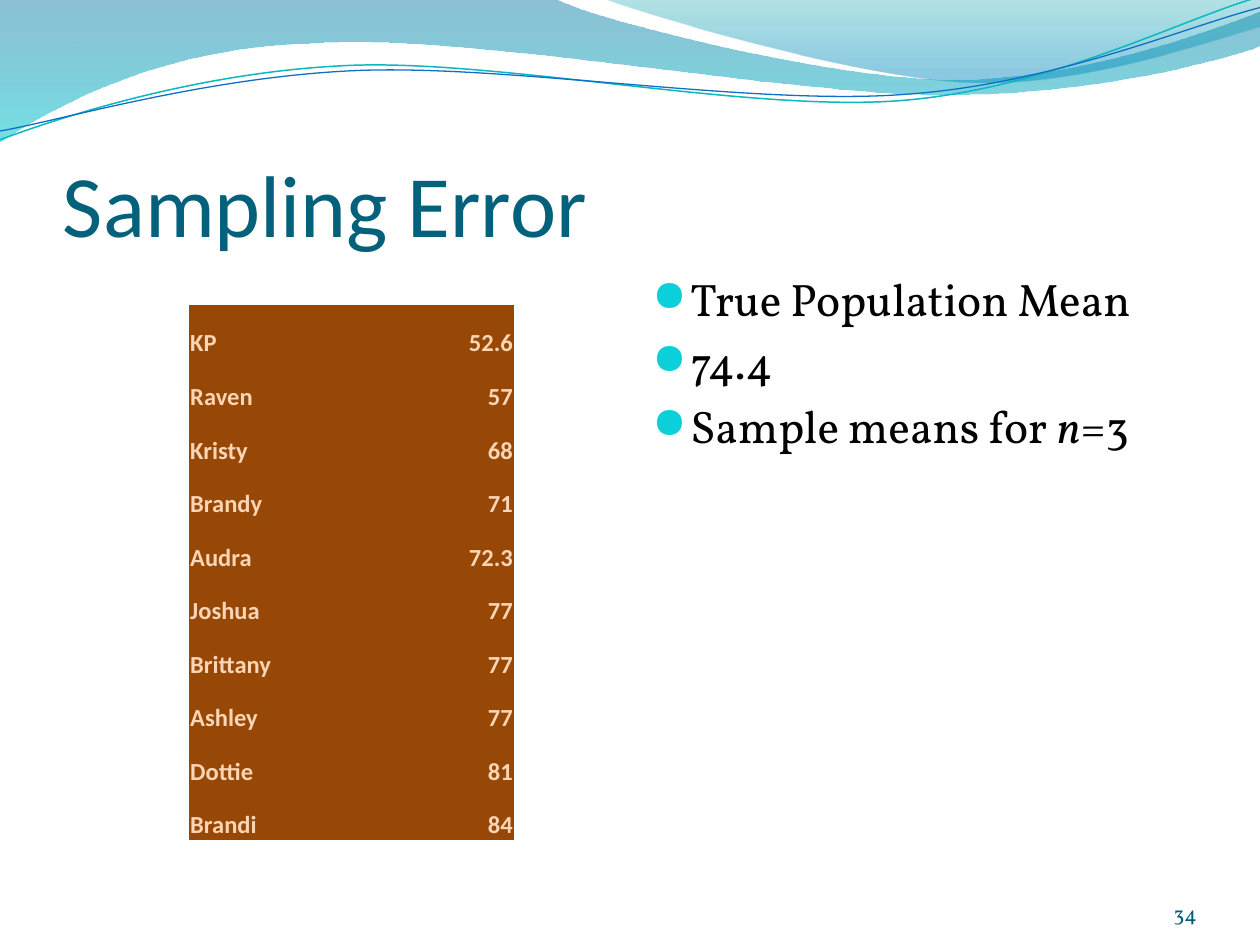
from math import cos, radians, sin

from lxml import etree
from pptx import Presentation
from pptx.dml.color import RGBColor
from pptx.enum.text import MSO_ANCHOR, PP_ALIGN
from pptx.oxml.ns import qn
from pptx.util import Inches, Pt

BOTTOM, TOP = MSO_ANCHOR.BOTTOM, MSO_ANCHOR.TOP
LEFT, RIGHT = PP_ALIGN.LEFT, PP_ALIGN.RIGHT
COLORS = {
    "title": "04617B", "body": "000000", "bullet": "0BD0D9", "number": "045D75",
    "cell": "974807", "cell_text": "FCD5B4",
    "teal_line": "0AB8BF", "blue_line": "0F6FC6",
    "wave_top": "0074A1", "wave_bottom": "00C6CF",
    "crest_top": "00A1A9", "crest_bottom": "008BBF",
}
TILT = -2.7

presentation = Presentation()
presentation.slide_width, presentation.slide_height = Inches(10), Inches(7.5)
slide = presentation.slides.add_slide(presentation.slide_layouts[6])


def add_outline(box, start, segments, closed, rotation=0):
    """Draw a path in a box; a segment of 1 point is a line, one of 3 a Bezier curve."""
    left, top, width, height = box
    builder = slide.shapes.build_freeform(Inches(start[0]), Inches(start[1]))
    builder.add_line_segments([tuple(map(Inches, segment[-1])) for segment in segments], closed)
    shape = builder.convert_to_shape()
    shape.shadow.inherit = False
    shape.left, shape.top, shape.width, shape.height = map(Inches, box)
    shape.rotation = rotation
    outline = next(shape._element.spPr.iter(qn("a:path")))
    outline.set("w", str(Inches(width)))
    outline.set("h", str(Inches(height)))
    center_x, center_y = left + width / 2, top + height / 2
    cosine, sine = cos(radians(rotation)), sin(radians(rotation))
    # Points are slide positions, so undo the rotation inside the box
    for command, segment in zip(list(outline), [[start], *segments]):
        if len(segment) == 3:
            curve = etree.Element(qn("a:cubicBezTo"))
            outline.replace(command, curve)
            command = curve
        for point in list(command):
            command.remove(point)
        for x, y in segment:
            dx, dy = x - center_x, y - center_y
            local_x = dx * cosine + dy * sine + width / 2
            local_y = dy * cosine - dx * sine + height / 2
            etree.SubElement(command, qn("a:pt"), x=str(Inches(local_x)), y=str(Inches(local_y)))
    return shape


def add_text(frame, paragraphs, size, font, color, align=LEFT, **style):
    """Fill a text frame with paragraphs, each a list of (text, italic) runs."""
    for index, runs in enumerate(paragraphs):
        paragraph = frame.paragraphs[0] if index == 0 else frame.add_paragraph()
        paragraph.alignment = align
        for text, italic in runs:
            run = paragraph.add_run()
            run.text = text
            run.font.color.rgb = RGBColor.from_string(COLORS[color])
            for name, value in {"size": Pt(size), "name": font, "italic": italic, **style}.items():
                setattr(run.font, name, value)


# Translucent waves: box, start, segments, stops (position, colour, opacity in %)
waves = [
    ((-0.01, -0.01, 10.02, 1.14), (0, 0),
     [[(4.4, -0.01)], [(4.76, 0.17), (6.64, 0.63), (7.58, 0.63)],
      [(8.53, 0.63), (9.58, 0.26), (10, 0.09)], [(10.01, 0.36)],
      [(9.83, 0.44), (8.7, 0.76), (7.46, 0.75)], [(6.22, 0.75), (3.82, 0.28), (2.57, 0.34)],
      [(1.29, 0.36), (0.46, 0.83), (-0.01, 1.13)], [(0, 0)]],
     [(0, "wave_top", 45), (1, "wave_bottom", 55)]),
    ((4.79, -0.01, 5.21, 0.7), (4.79, -0.01),
     [[(5.09, 0.11), (6.82, 0.62), (7.69, 0.65)], [(8.56, 0.69), (9.61, 0.32), (10, 0.21)],
      [(10, 0)], [(4.79, -0.01)]],
     [(0, "crest_top", 30), (0.8, "crest_bottom", 45)]),
]
for box, start, segments, stops in waves:
    wave = add_outline(box, start, segments, True)
    wave.line.fill.background()
    wave.fill.gradient()
    wave.fill.gradient_angle = 270
    for stop, (position, color, _) in zip(wave.fill.gradient_stops, stops):
        stop.position = position
        stop.color.rgb = RGBColor.from_string(COLORS[color])
    for element, (_, _, opacity) in zip(wave._element.spPr.iter(qn("a:srgbClr")), stops):
        etree.SubElement(element, qn("a:alpha"), val=str(opacity * 1000))

# Thin tilted wave lines
wave_lines = [
    ((-0.02, 0.22, 10.02, 0.71), (0, 1.11),
     [[(0.48, 0.93), (1.58, 0.57), (2.77, 0.52)], [(3.95, 0.47), (5.93, 0.89), (7.13, 0.8)],
      [(8.33, 0.71), (9.38, 0.15), (9.98, -0.02)]], "teal_line", 0.85),
    ((-0.02, 0.3, 10.03, 0.58), (0, 1.04),
     [[(0.47, 0.96), (1.64, 0.61), (2.83, 0.56)], [(4.03, 0.51), (5.97, 0.84), (7.17, 0.75)],
      [(8.36, 0.67), (9.41, 0.21), (10, 0.06)]], "blue_line", 0.75),
]
for box, start, segments, color, width in wave_lines:
    wave_line = add_outline(box, start, segments, False, TILT)
    wave_line.fill.background()
    wave_line.line.color.rgb = RGBColor.from_string(COLORS[color])
    wave_line.line.width = Pt(width)

# Title, bullet list and slide number: box, insets, anchor, paragraphs, text style
bullets = [[("True Population Mean", False)], [("74.4", False)],
           [("Sample means for ", False), ("n", True), ("=3", False)]]
text_boxes = [
    ((0.5, 0.77, 9, 1.25), (0, 0.05, 0, 0), BOTTOM, [[("Sampling Error", False)]],
     (50, "Calibri", "title")),
    ((5.08, 2.1, 4.42, 4.85), (0.1, 0.05, 0.1, 0.05), TOP, bullets, (26, "Vollkorn", "body")),
    ((8.67, 6.95, 0.83, 0.4), (0, 0, 0, 0), BOTTOM, [[("34", False)]],
     (12, "Vollkorn", "number", RIGHT)),
]
for box, insets, anchor, paragraphs, style in text_boxes:
    frame = slide.shapes.add_textbox(*map(Inches, box)).text_frame
    frame.word_wrap = True
    frame.vertical_anchor = anchor
    for side, inset in zip(("left", "top", "right", "bottom"), insets):
        setattr(frame, f"margin_{side}", Inches(inset))
    add_text(frame, paragraphs, *style)
    if paragraphs is bullets:
        for paragraph in frame.paragraphs:
            properties = paragraph._p.get_or_add_pPr()
            properties.set("marL", str(Inches(0.3)))
            properties.set("indent", str(Inches(-0.3)))
            space = etree.SubElement(properties, qn("a:spcBef"))
            etree.SubElement(space, qn("a:spcPct"), val="20000")
            bullet_color = etree.SubElement(properties, qn("a:buClr"))
            etree.SubElement(bullet_color, qn("a:srgbClr"), val=COLORS["bullet"])
            etree.SubElement(properties, qn("a:buSzPct"), val="95000")
            etree.SubElement(properties, qn("a:buFont"), typeface="OpenSymbol")
            etree.SubElement(properties, qn("a:buChar"), char="●")

# Score table
scores = [("KP", "52.6"), ("Raven", "57"), ("Kristy", "68"), ("Brandy", "71"),
          ("Audra", "72.3"), ("Joshua", "77"), ("Brittany", "77"), ("Ashley", "77"),
          ("Dottie", "81"), ("Brandi", "84")]
table = slide.shapes.add_table(len(scores), 2, Inches(1.5), Inches(2.42),
                               Inches(2.58), Inches(4.25)).table
table.first_row = table.horz_banding = False
for column, width in zip(table.columns, (1.39, 1.19)):
    column.width = Inches(width)
cell_format = {"vertical_anchor": BOTTOM, "margin_left": Inches(0.01), "margin_top": Inches(0.01),
               "margin_right": Inches(0.01), "margin_bottom": 0}
for row, values in enumerate(scores):
    for column, (text, align) in enumerate(zip(values, (LEFT, RIGHT))):
        cell = table.cell(row, column)
        for name, value in cell_format.items():
            setattr(cell, name, value)
        cell.fill.solid()
        cell.fill.fore_color.rgb = RGBColor.from_string(COLORS["cell"])
        add_text(cell.text_frame, [[(text, False)]], 14, "Calibri", "cell_text", align, bold=True)
        # Remove the white grid of the default table style
        fill = cell._tc.tcPr.find(qn("a:solidFill"))
        for side in ("a:lnL", "a:lnR", "a:lnT", "a:lnB"):
            border = etree.Element(qn(side), w="0")
            etree.SubElement(border, qn("a:noFill"))
            fill.addprevious(border)

presentation.save("out.pptx")
